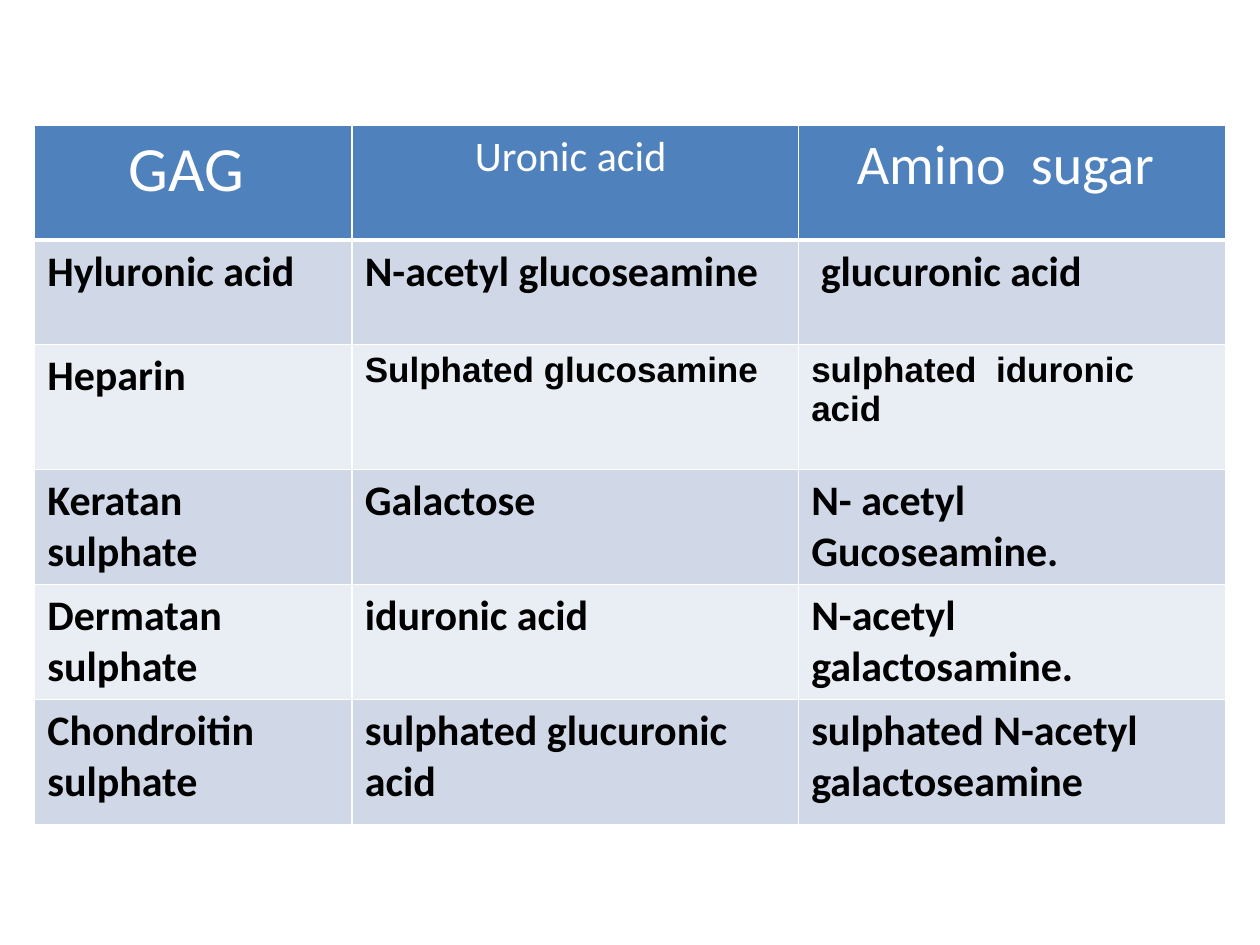
from lxml.etree import SubElement
from pptx import Presentation
from pptx.dml.color import RGBColor
from pptx.enum.text import PP_ALIGN
from pptx.oxml.ns import qn
from pptx.util import Cm, Pt

# Content
HEADINGS = [("GAG ", 36), ("Uronic acid ", 24), ("Amino  sugar ", 32)]
GAGS = [
    ("Hyluronic acid", "N-acetyl glucoseamine", " glucuronic acid"),
    ("Heparin", "Sulphated glucosamine", "sulphated  iduronic acid"),
    ("Keratan sulphate", "Galactose", "N- acetyl Gucoseamine."),
    ("Dermatan sulphate", "iduronic acid", "N-acetyl galactosamine."),
    ("Chondroitin sulphate", "sulphated glucuronic acid",
     "sulphated N-acetyl galactoseamine"),
]
ARIAL_TEXTS = GAGS[1][1:]

# Layout in cm
LEFT, TOP = 0.7, 2.52
COLUMN_WIDTHS = [6.4, 9, 8.6]
ROW_HEIGHTS = [2.32, 2.1, 2.52, 2.1, 2.1, 2.52]

COLORS = {"header": "4F81BD", "odd": "D0D8E8", "even": "E9EDF4",
          "line": "FFFFFF", "heading": "FFFFFF", "text": "000000"}


def write(cell, text, size=24, font="Calibri", color="text", bold=True,
          align=PP_ALIGN.LEFT):
    paragraph = cell.text_frame.paragraphs[0]
    paragraph.alignment = align
    run = paragraph.add_run()
    run.text = text
    run.font.size = Pt(size)
    run.font.name = font
    run.font.bold = bold
    run.font.color.rgb = RGBColor.from_string(COLORS[color])


def dress(cell, fill, bottom=1):
    """Draw the four white borders, then fill the cell."""
    properties = cell._tc.get_or_add_tcPr()
    for side, width in (("L", 1), ("R", 1), ("T", 1), ("B", bottom)):
        line = SubElement(properties, qn(f"a:ln{side}"), w=str(Pt(width)))
        solid = SubElement(line, qn("a:solidFill"))
        SubElement(solid, qn("a:srgbClr"), val=COLORS["line"])
    cell.fill.solid()
    cell.fill.fore_color.rgb = RGBColor.from_string(COLORS[fill])


def main():
    deck = Presentation()
    deck.slide_width, deck.slide_height = Cm(25.4), Cm(19.05)
    slide = deck.slides.add_slide(deck.slide_layouts[6])

    # Table grid
    gag_table = slide.shapes.add_table(
        len(ROW_HEIGHTS), len(COLUMN_WIDTHS), Cm(LEFT), Cm(TOP),
        Cm(sum(COLUMN_WIDTHS)), Cm(sum(ROW_HEIGHTS))).table
    for column, width in zip(gag_table.columns, COLUMN_WIDTHS):
        column.width = Cm(width)
    for row, height in zip(gag_table.rows, ROW_HEIGHTS):
        row.height = Cm(height)

    # Header row
    for column, (heading, size) in enumerate(HEADINGS):
        cell = gag_table.cell(0, column)
        dress(cell, "header", bottom=3)
        write(cell, heading, size=size, color="heading", bold=False,
              align=PP_ALIGN.CENTER)

    # Body rows with alternating bands
    for row, components in enumerate(GAGS, start=1):
        for column, component in enumerate(components):
            cell = gag_table.cell(row, column)
            dress(cell, "odd" if row % 2 else "even")
            if component in ARIAL_TEXTS:
                write(cell, component, size=20, font="Arial")
            else:
                write(cell, component)

    deck.save("out.pptx")


if __name__ == "__main__":
    main()
